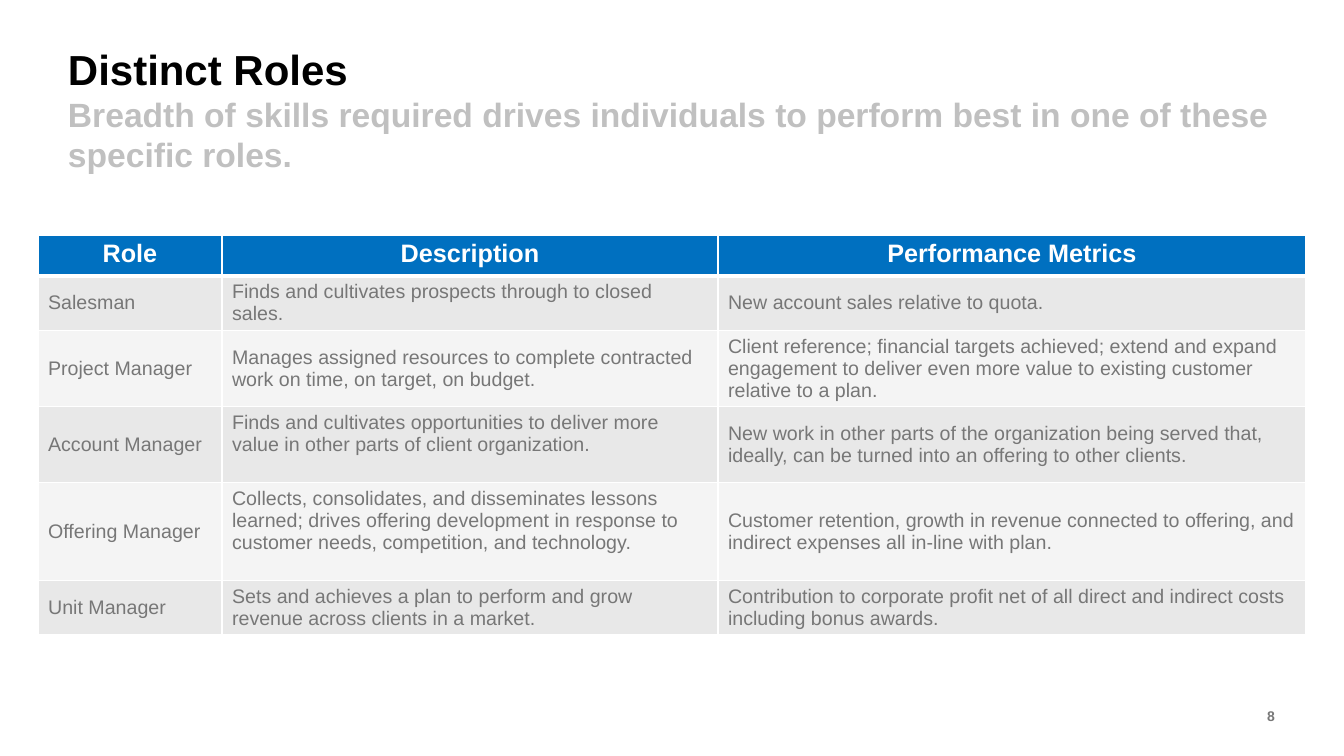
import pptx
import pptx.util
import pptx.dml.color
import pptx.enum.text
import pptx.oxml
import pptx.oxml.ns

EMU_PER_PIXEL = 914400 / 100.8
COLORS = {
    "title": "000000",
    "subtitle": "C0C0C0",
    "body": "777777",
    "header": "0070C0",
    "white": "FFFFFF",
    "odd": "E8E8E8",
    "even": "F4F4F4",
}
ALIGN = pptx.enum.text.PP_ALIGN
ANCHOR = pptx.enum.text.MSO_ANCHOR


def px(*lengths):
    return [pptx.util.Emu(round(length * EMU_PER_PIXEL)) for length in lengths]


def add_text(paragraph, text, size=14, color="body", bold=False, alignment=ALIGN.LEFT):
    paragraph.alignment = alignment
    run = paragraph.add_run()
    run.text = text
    run.font.name = "Arial"
    run.font.size = pptx.util.Pt(size)
    run.font.bold = bold
    run.font.color.rgb = pptx.dml.color.RGBColor.from_string(COLORS[color])


presentation = pptx.Presentation()
presentation.slide_width, presentation.slide_height = px(1344, 756)
slide = presentation.slides.add_slide(presentation.slide_layouts[5])

title = slide.shapes.title
title.left, title.top, title.width, title.height = px(68, 43, 1210, 158)
number_box = slide.shapes.add_textbox(*px(1227, 685, 48, 62))
for shape, anchor in ((title, ANCHOR.TOP), (number_box, ANCHOR.MIDDLE)):
    frame = shape.text_frame
    frame.word_wrap = True
    frame.auto_size = pptx.enum.text.MSO_AUTO_SIZE.NONE
    frame.vertical_anchor = anchor
    frame.margin_left = frame.margin_right = frame.margin_top = frame.margin_bottom = 0

heading = title.text_frame.paragraphs[0]
add_text(heading, "Distinct Roles", size=30, color="title", bold=True)
heading.add_line_break()
add_text(
    heading,
    "Breadth of skills required drives individuals to perform best in one of these specific roles.",
    size=24, color="subtitle", bold=True,
)
add_text(number_box.text_frame.paragraphs[0], "8", size=10, bold=True, alignment=ALIGN.RIGHT)

roles = [
    ("Role", "Description", "Performance Metrics"),
    ("Salesman",
     "Finds and cultivates prospects through to closed sales.",
     "New account sales relative to quota."),
    ("Project Manager",
     "Manages assigned resources to complete contracted work on time, on target, on budget.",
     "Client reference; financial targets achieved; extend and expand engagement to deliver even more value to existing customer relative to a plan."),
    ("Account Manager",
     "Finds and cultivates opportunities to deliver more value in other parts of client organization.",
     "New work in other parts of the organization being served that, ideally, can be turned into an offering to other clients."),
    ("Offering Manager",
     "Collects, consolidates, and disseminates lessons learned; drives offering development in response to customer needs, competition, and technology.",
     "Customer retention, growth in revenue connected to offering, and indirect expenses all in-line with plan."),
    ("Unit Manager",
     "Sets and achieves a plan to perform and grow revenue across clients in a market.",
     "Contribution to corporate profit net of all direct and indirect costs including bonus awards."),
]
column_widths = [184, 496, 588]
row_heights = [41, 54, 76, 76, 98, 54]
top_aligned = {(3, 1), (4, 1)}

table = slide.shapes.add_table(
    len(roles), len(column_widths), *px(38, 235, sum(column_widths), sum(row_heights))
).table
for column, width in zip(table.columns, px(*column_widths)):
    column.width = width
for row, height in zip(table.rows, px(*row_heights)):
    row.height = height

for row_index, texts in enumerate(roles):
    is_header = row_index == 0
    fill = "header" if is_header else ("even", "odd")[row_index % 2]
    for column_index, text in enumerate(texts):
        cell = table.cell(row_index, column_index)
        properties = cell._tc.get_or_add_tcPr()
        for side in "LRTB":
            thick = (row_index, side) in ((0, "B"), (1, "T"))
            properties.append(pptx.oxml.parse_xml(
                f'<a:ln{side} {pptx.oxml.ns.nsdecls("a")} w="{pptx.util.Pt(3 if thick else 1)}">'
                f'<a:solidFill><a:srgbClr val="{COLORS["white"]}"/></a:solidFill></a:ln{side}>'
            ))
        cell.fill.solid()
        cell.fill.fore_color.rgb = pptx.dml.color.RGBColor.from_string(COLORS[fill])
        at_top = is_header or (row_index, column_index) in top_aligned
        cell.vertical_anchor = ANCHOR.TOP if at_top else ANCHOR.MIDDLE
        paragraph = cell.text_frame.paragraphs[0]
        if is_header:
            add_text(paragraph, text, size=18, color="white", bold=True, alignment=ALIGN.CENTER)
        else:
            add_text(paragraph, text)

presentation.save("out.pptx")
